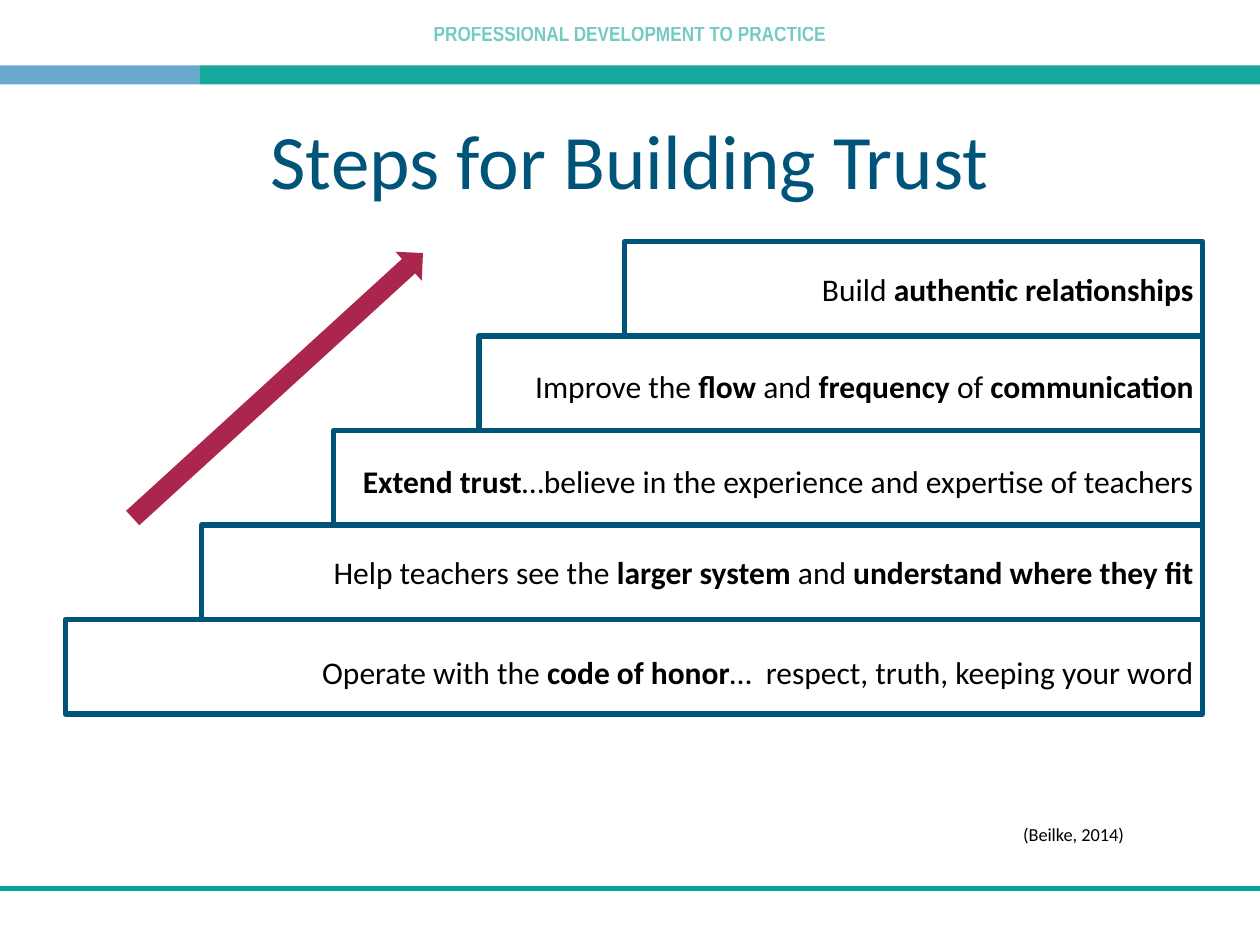
from lxml.etree import SubElement
from pptx import Presentation
from pptx.dml.color import RGBColor
from pptx.enum.shapes import MSO_CONNECTOR, MSO_SHAPE
from pptx.enum.text import MSO_ANCHOR, PP_ALIGN
from pptx.oxml.ns import qn
from pptx.util import Pt

TEAL = "19A89E"
NAVY = "005479"

deck = Presentation()
deck.slide_width, deck.slide_height = Pt(720), Pt(540)
page = deck.slides.add_slide(deck.slide_layouts[6])


def add_block(kind, left, top, width, height, fill=None, line=None):
    block = page.shapes.add_shape(kind, Pt(left), Pt(top), Pt(width), Pt(height))
    block.shadow.inherit = False
    if fill:
        block.fill.solid()
        block.fill.fore_color.rgb = RGBColor.from_string(fill)
    else:
        block.fill.background()
    if line:
        block.line.color.rgb = RGBColor.from_string(line)
        block.line.width = Pt(3)
    else:
        block.line.fill.background()
    return block


def add_text(text, left, top, width, height, size, align, color="000000",
             font="Calibri", inset=5.04):
    """Add a one-paragraph text box; parts between ** marks are bold."""
    box = page.shapes.add_textbox(Pt(left), Pt(top), Pt(width), Pt(height))
    frame = box.text_frame
    frame.word_wrap = True
    frame.margin_left = frame.margin_right = Pt(inset)
    frame.margin_top = frame.margin_bottom = Pt(inset / 2)
    para = frame.paragraphs[0]
    para.alignment = align
    para.font.size = Pt(size)
    para.font.name = font
    para.font.color.rgb = RGBColor.from_string(color)
    for index, part in enumerate(text.split("**")):
        if part:
            span = para.add_run()
            span.text = part
            span.font.bold = index % 2 == 1
    return box


# Header band and footer rule
header = add_text("**PROFESSIONAL DEVELOPMENT TO PRACTICE**", 0, 9.4, 720, 28.8, 12,
                  PP_ALIGN.CENTER, TEAL, "Arial Narrow")
header_color = header.text_frame.paragraphs[0]._p.find(".//" + qn("a:srgbClr"))
SubElement(header_color, qn("a:alpha"), val="60000")
add_block(MSO_SHAPE.RECTANGLE, 0, 37.4, 114, 10.8, fill="69A9CD")
add_block(MSO_SHAPE.RECTANGLE, 114, 37.4, 606, 10.8, fill=TEAL)
rule = page.shapes.add_connector(MSO_CONNECTOR.STRAIGHT, Pt(0), Pt(507.6), Pt(720), Pt(507.6))
rule.line.color.rgb = RGBColor.from_string("00A49D")
rule.line.width = Pt(3)
SubElement(rule._element.spPr, qn("a:effectLst"))

title = add_text("Steps for Building Trust", 36, 47.5, 648, 86.4, 44, PP_ALIGN.CENTER,
                 NAVY, inset=7.2)
title.text_frame.vertical_anchor = MSO_ANCHOR.MIDDLE

arrow = add_block(MSO_SHAPE.UP_ARROW, 147.6, 108, 22.3, 224.6, fill="AA264C")
arrow.rotation = 47.6

# Staircase: left edge of the step, left and top of its text, wording
STEPS_RIGHT, STEPS_TOP, STEP_HEIGHT = 687.2, 138, 54
steps = [
    (357, 458, 151.9, "Build **authentic relationships**"),
    (273.8, 289.4, 207.4, "Improve the **flow** and **frequency** of **communication**"),
    (190.8, 169.9, 261.4,
     "**Extend trust**…believe in the experience and expertise of teachers"),
    (115.2, 89.3, 313.2,
     "Help teachers see the **larger system **and** understand where they fit**"),
    (37.3, 97.2, 370.8,
     "Operate with the **code of honor**…  respect, truth, keeping your word"),
]
for row, (step_left, text_left, text_top, wording) in enumerate(steps):
    add_text(wording, text_left, text_top, STEPS_RIGHT - text_left, 27.4, 18, PP_ALIGN.RIGHT)
    add_block(MSO_SHAPE.RECTANGLE, step_left, STEPS_TOP + row * STEP_HEIGHT,
              STEPS_RIGHT - step_left, STEP_HEIGHT, line=NAVY)

add_text("(Beilke, 2014)", 486.7, 466.6, 162.7, 25.9, 10.5, PP_ALIGN.RIGHT, inset=7.2)

deck.save("out.pptx")
